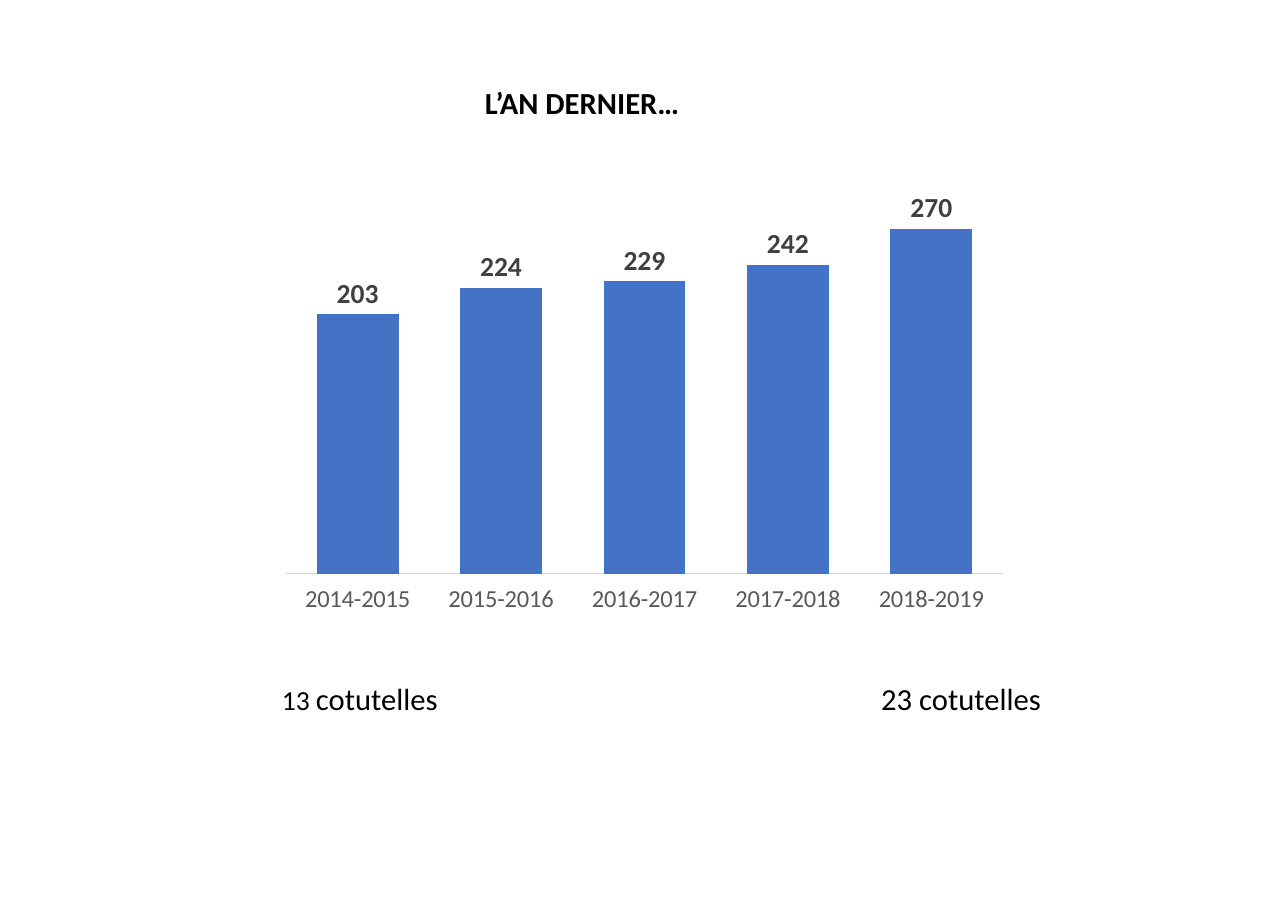
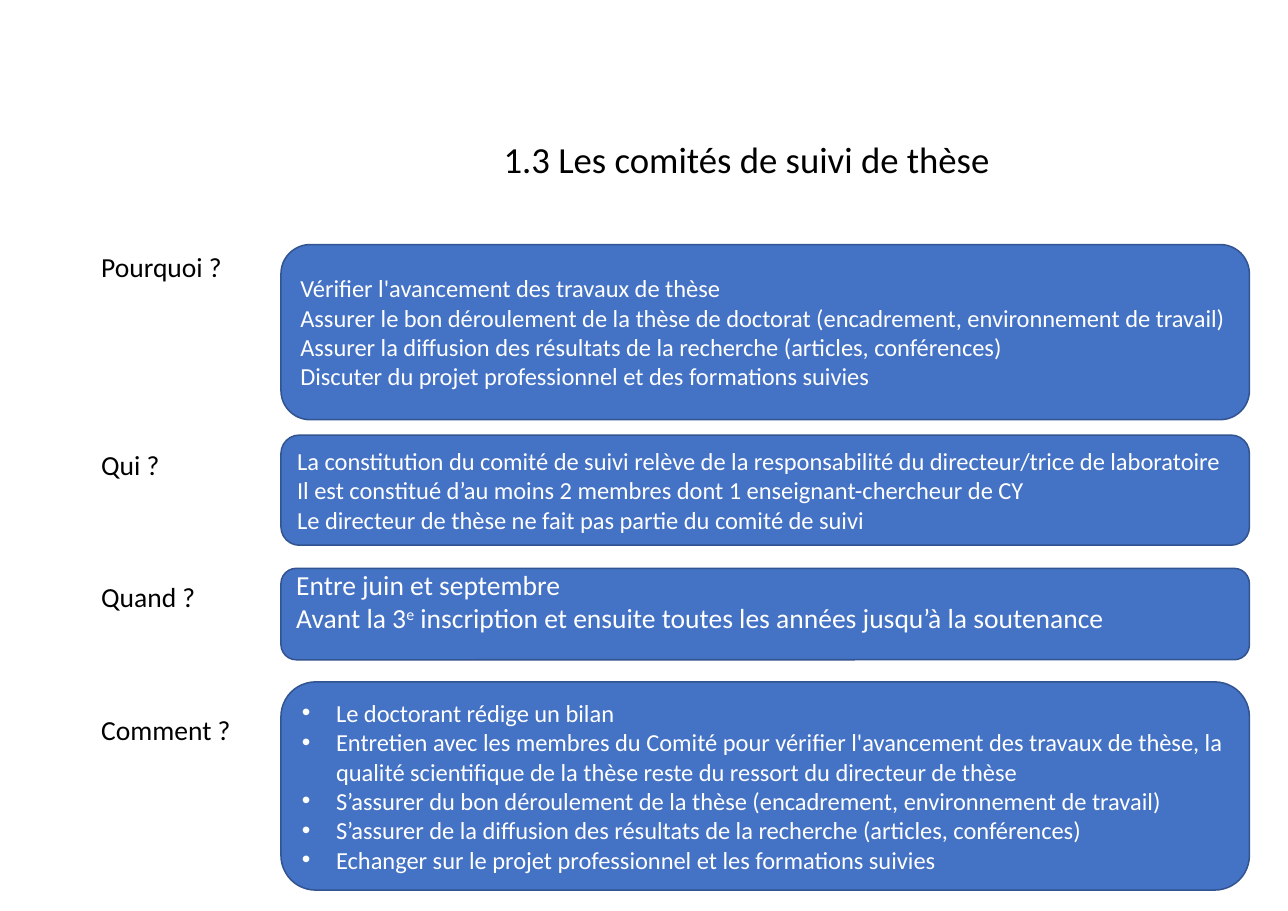
from lxml.etree import SubElement
from pptx import Presentation
from pptx.chart.data import CategoryChartData
from pptx.dml.color import RGBColor
from pptx.enum.chart import XL_CHART_TYPE, XL_LABEL_POSITION, XL_TICK_LABEL_POSITION, XL_TICK_MARK
from pptx.enum.shapes import MSO_SHAPE
from pptx.enum.text import MSO_ANCHOR, MSO_AUTO_SIZE, PP_ALIGN
from pptx.oxml.ns import qn
from pptx.util import Inches, Pt


def rgb(value):
    return RGBColor.from_string(value)


class Deck:
    FONT = "Calibri"
    BLACK, WHITE = "000000", "FFFFFF"
    BLUE, OUTLINE = "4472C4", "325491"
    AXIS_TEXT, AXIS_LINE, LABEL_TEXT = "595959", "D9D9D9", "404040"

    def __init__(self):
        self.presentation = Presentation()
        self.presentation.slide_width = Inches(11.69)
        self.presentation.slide_height = Inches(8.27)
        self.slide = None

    def style(self, font, size, color=BLACK, bold=False):
        font.name = self.FONT
        font.size = Pt(size)
        font.bold = bold
        font.color.rgb = rgb(color)

    def add_slide(self, title, left, top, width, height, size, bold=False):
        self.slide = self.presentation.slides.add_slide(self.presentation.slide_layouts[5])
        heading = self.slide.shapes.title
        heading.left, heading.top = Inches(left), Inches(top)
        heading.width, heading.height = Inches(width), Inches(height)
        frame = heading.text_frame
        frame.text = title
        frame.auto_size = MSO_AUTO_SIZE.NONE
        frame.vertical_anchor = MSO_ANCHOR.TOP
        frame.paragraphs[0].alignment = PP_ALIGN.LEFT
        self.style(frame.paragraphs[0].font, size, bold=bold)

    def add_label(self, left, top, width, height, *parts):
        box = self.slide.shapes.add_textbox(Inches(left), Inches(top), Inches(width), Inches(height))
        box.text_frame.word_wrap = False
        paragraph = box.text_frame.paragraphs[0]
        for text, size in parts:
            run = paragraph.add_run()
            run.text = text
            if len(parts) > 1:
                self.style(run.font, size)
        if len(parts) == 1:
            self.style(paragraph.font, parts[0][1])

    def add_panel(self, top, height, lines, size=16, bullets=False, bottom_inset=0.05):
        panel = self.slide.shapes.add_shape(
            MSO_SHAPE.ROUNDED_RECTANGLE, Inches(2.55), Inches(top), Inches(8.79), Inches(height))
        panel.shadow.inherit = False
        panel.fill.solid()
        panel.fill.fore_color.rgb = rgb(self.BLUE)
        panel.line.color.rgb = rgb(self.OUTLINE)
        panel.line.width = Pt(1)
        frame = panel.text_frame
        frame.word_wrap = True
        frame.vertical_anchor = MSO_ANCHOR.MIDDLE
        frame.margin_bottom = Inches(bottom_inset)
        for index, line in enumerate(lines):
            paragraph = frame.paragraphs[0] if index == 0 else frame.add_paragraph()
            paragraph.alignment = PP_ALIGN.LEFT
            if bullets:
                self.add_bullet(paragraph)
            for position, text in enumerate(line.split("^")):
                run = paragraph.add_run()
                run.text = text
                if position % 2:
                    run._r.get_or_add_rPr().set("baseline", "30000")
            self.style(paragraph.font, size, self.WHITE)

    def add_bullet(self, paragraph):
        properties = paragraph._p.get_or_add_pPr()
        properties.set("marL", str(Inches(0.31)))
        properties.set("indent", str(-Inches(0.31)))
        SubElement(properties, qn("a:buFont")).set("typeface", "Arial")
        SubElement(properties, qn("a:buChar")).set("char", "•")

    def add_columns(self, left, top, width, height, categories, values):
        data = CategoryChartData()
        data.categories = categories
        data.add_series("Series 1", values)
        chart = self.slide.shapes.add_chart(
            XL_CHART_TYPE.COLUMN_CLUSTERED, Inches(left), Inches(top),
            Inches(width), Inches(height), data).chart
        chart.has_legend = False
        chart.has_title = False
        self.style(chart.font, 10)

        years = chart.category_axis
        years.major_tick_mark = XL_TICK_MARK.NONE
        years.tick_label_position = XL_TICK_LABEL_POSITION.LOW
        years.format.line.color.rgb = rgb(self.AXIS_LINE)
        years.format.line.width = Pt(0.75)
        self.style(years.tick_labels.font, 16, self.AXIS_TEXT)

        counts = chart.value_axis
        counts.visible = False
        counts.has_major_gridlines = False
        counts.minimum_scale, counts.maximum_scale = 0, 300

        plot = chart.plots[0]
        plot.gap_width = 75
        plot.vary_by_categories = False
        fill = plot.series[0].format.fill
        fill.solid()
        fill.fore_color.rgb = rgb(self.BLUE)
        plot.has_data_labels = True
        plot.data_labels.show_value = True
        plot.data_labels.position = XL_LABEL_POSITION.OUTSIDE_END
        self.style(plot.data_labels.font, 18, self.LABEL_TEXT, bold=True)


def main():
    deck = Deck()

    deck.add_slide("L’AN DERNIER…", 4.3, 0.71, 5.12, 0.44, 20, bold=True)
    deck.add_columns(
        2.46, 1.65, 6.78, 4.01,
        ["2014-2015", "2015-2016", "2016-2017", "2017-2018", "2018-2019"],
        [203, 224, 229, 242, 270])
    deck.add_label(2.46, 6.12, 1.63, 0.44, ("13 ", 18), ("cotutelles", 20))
    deck.add_label(7.9, 6.12, 1.67, 0.44, ("23 cotutelles", 20))

    deck.add_slide("1.3 Les comités de suivi de thèse", 4.47, 1.19, 4.85, 0.5, 24)
    questions = [("Pourquoi ?", 2.22), ("Qui ?", 4.02), ("Quand ?", 5.22), ("Comment ?", 6.42)]
    for question, top in questions:
        deck.add_label(0.82, top, 1.39, 0.4, (question, 18))

    deck.add_panel(2.22, 1.59, [
        "Vérifier l'avancement des travaux de thèse",
        "Assurer le bon déroulement de la thèse de doctorat (encadrement, environnement de travail)",
        "Assurer la diffusion des résultats de la recherche (articles, conférences)",
        "Discuter du projet professionnel et des formations suivies",
    ])
    deck.add_panel(3.95, 1, [
        "La constitution du comité de suivi relève de la responsabilité du directeur/trice de laboratoire",
        "Il est constitué d’au moins 2 membres dont 1 enseignant-chercheur de CY",
        "Le directeur de thèse ne fait pas partie du comité de suivi",
    ])
    deck.add_panel(5.16, 0.83, [
        "Entre juin et septembre",
        "Avant la 3^e^ inscription et ensuite toutes les années jusqu’à la soutenance",
    ], size=18, bottom_inset=0.29)
    deck.add_panel(6.19, 1.89, [
        "Le doctorant rédige un bilan",
        "Entretien avec les membres du Comité pour vérifier l'avancement des travaux de thèse, "
        "la qualité scientifique de la thèse reste du ressort du directeur de thèse",
        "S’assurer du bon déroulement de la thèse (encadrement, environnement de travail)",
        "S’assurer de la diffusion des résultats de la recherche (articles, conférences)",
        "Echanger sur le projet professionnel et les formations suivies",
    ], bullets=True)

    deck.presentation.save("out.pptx")


if __name__ == "__main__":
    main()
